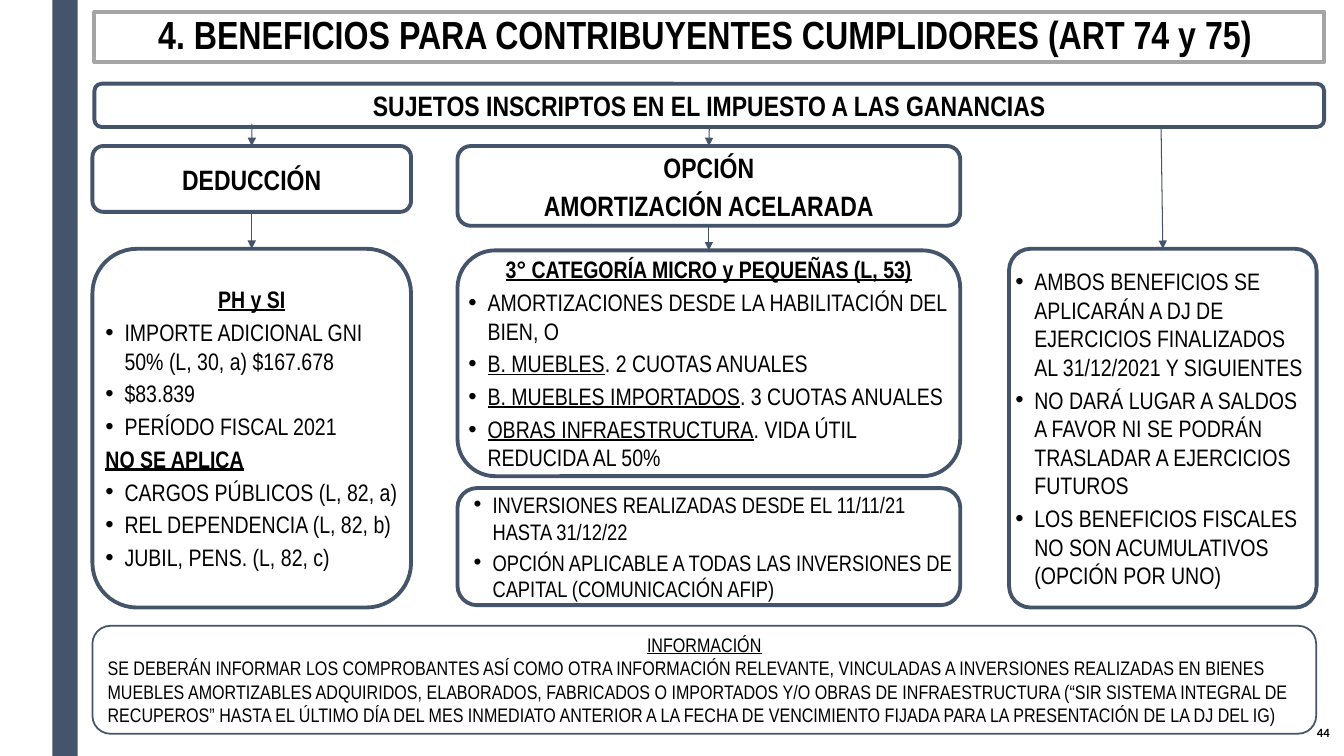
from dataclasses import dataclass
from typing import Optional

import pptx
import pptx.dml.color
import pptx.enum.shapes
import pptx.enum.text
import pptx.oxml
import pptx.oxml.ns
import pptx.util
from pptx.util import Cm

COLORS = {"slate": "44546A", "gray": "A5A5A5", "white": "FFFFFF", "black": "000000"}
ALIGN = pptx.enum.text.PP_ALIGN
SHAPES = pptx.enum.shapes.MSO_SHAPE
ROUNDED = SHAPES.ROUNDED_RECTANGLE
TOP, BOTTOM = 0, 2
HANGING = 0.48


@dataclass
class Span:
    text: str
    bold: bool = False
    underline: bool = False


@dataclass
class Para:
    spans: list[Span]
    align: ALIGN = ALIGN.LEFT
    indent: float = 0  # left edge of bulleted text; 0 means no bullet
    line_spacing: Optional[float] = None


@dataclass
class Box:
    key: str
    left: float
    top: float
    width: float
    height: float
    paras: list[Para]
    size: float = 17
    space_after: float = 3
    inset: tuple[float, float, float] = (0, 0, 0)  # left, right, top and bottom
    line: Optional[str] = "slate"
    line_width: float = 2.75
    fill: str = "white"
    kind: SHAPES = ROUNDED
    corner: Optional[float] = None


@dataclass
class Arrow:
    start: Optional[str]  # box whose bottom middle it leaves
    end: str  # box whose top middle it reaches
    free_start: tuple[float, float] = (0, 0)


def heading(text: str, underline: bool = False, align: ALIGN = ALIGN.CENTER,
            line_spacing: Optional[float] = None) -> Para:
    return Para([Span(text, True, underline)], align, line_spacing=line_spacing)


def bullet(text: str, lead: str = "", indent: float = HANGING) -> Para:
    spans = [Span(lead, underline=True)] if lead else []
    return Para(spans + [Span(text)], indent=indent)


def color(name: str) -> pptx.dml.color.RGBColor:
    return pptx.dml.color.RGBColor.from_string(COLORS[name])


def apply(target, formats: dict) -> None:
    for key, value in formats.items():
        setattr(target, key, value)


def write_paras(frame, paras: list[Para], size: float, space_after: float,
                inset: tuple[float, float, float], font: str = "Arial Narrow") -> None:
    left, right, edge = (Cm(length) for length in inset)
    apply(frame, {"word_wrap": True, "margin_left": left, "margin_right": right,
                  "margin_top": edge, "margin_bottom": edge,
                  "vertical_anchor": pptx.enum.text.MSO_ANCHOR.MIDDLE})
    for index, item in enumerate(paras):
        para = frame.add_paragraph() if index else frame.paragraphs[0]
        apply(para, {"alignment": item.align, "line_spacing": item.line_spacing,
                     "space_after": pptx.util.Pt(space_after)})
        if item.indent:
            props = para._p.get_or_add_pPr()
            props.set("marL", str(Cm(item.indent)))
            props.set("indent", str(-Cm(HANGING)))
            for tag, attribute, value in (("a:buFont", "typeface", "Arial"),
                                          ("a:buChar", "char", "•")):
                mark = pptx.oxml.ns.qn(tag)
                props.append(props.makeelement(mark, {attribute: value}))
        for piece in item.spans:
            span = para.add_run()
            span.text = piece.text
            apply(span.font, {"name": font, "size": pptx.util.Pt(size),
                              "bold": piece.bold, "underline": piece.underline})
            span.font.color.rgb = color("black")


def draw_box(page, box: Box):
    shape = page.shapes.add_shape(box.kind, Cm(box.left), Cm(box.top),
                                  Cm(box.width), Cm(box.height))
    shape.shadow.inherit = False
    shape.fill.solid()
    shape.fill.fore_color.rgb = color(box.fill)
    if box.line:
        shape.line.color.rgb = color(box.line)
        shape.line.width = pptx.util.Pt(box.line_width)
    else:
        shape.line.fill.background()
    if box.corner is not None:
        shape.adjustments[0] = box.corner
    if box.paras:
        write_paras(shape.text_frame, box.paras, box.size, box.space_after, box.inset)
    return shape


def draw_arrow(page, arrow: Arrow, shapes: dict) -> None:
    x, y = arrow.free_start
    line = page.shapes.add_connector(pptx.enum.shapes.MSO_CONNECTOR.STRAIGHT,
                                     Cm(x), Cm(y), Cm(x), Cm(y))
    if arrow.start:
        line.begin_connect(shapes[arrow.start], BOTTOM)
    line.end_connect(shapes[arrow.end], TOP)
    line.line.color.rgb = color("slate")
    line.line.width = pptx.util.Pt(0.75)
    outline = line.line._get_or_add_ln()
    outline.append(outline.makeelement(pptx.oxml.ns.qn("a:tailEnd"), {"type": "triangle"}))
    props = line._element.spPr
    props.append(props.makeelement(pptx.oxml.ns.qn("a:effectLst"), {}))


# Column and row positions in centimetres
LEFT, LEFT_W = 2.33, 8.03
MIDDLE, MIDDLE_W = 11.53, 12.67
RIGHT, RIGHT_W = 25.43, 7.75
HEAD_X, HEAD_W = 2.38, 30.99
OPTION_Y, DETAIL_Y, DETAIL_H = 3.68, 6.27, 9.04
PADDED = (0.25, 0.25, 0.13)

BOXES = [
    Box("Barra", 1.32, 0, 0.64, 19.05, [], line=None, fill="slate", kind=SHAPES.RECTANGLE),
    Box("Título", HEAD_X, 0.3, HEAD_W, 1.27,
        [heading("4. BENEFICIOS PARA CONTRIBUYENTES CUMPLIDORES (ART 74 y 75)",
                 line_spacing=0.89)],
        28, 0, (0.25, 0.48, 0.13), "gray", kind=SHAPES.RECTANGLE),
    Box("Sujetos", HEAD_X, 2.11, HEAD_W, 1.09,
        [heading("SUJETOS INSCRIPTOS EN EL IMPUESTO A LAS GANANCIAS")], 20, 0, PADDED),
    Box("Deducción", LEFT, OPTION_Y, LEFT_W, 1.66, [heading("DEDUCCIÓN")], 20),
    Box("Opción", MIDDLE, OPTION_Y, MIDDLE_W, 2.01,
        [heading("OPCIÓN"), heading("AMORTIZACIÓN ACELARADA")], 20),
    Box("Personas", LEFT, DETAIL_Y, LEFT_W, DETAIL_H, [
        heading("PH y SI", True),
        bullet("IMPORTE ADICIONAL GNI 50% (L, 30, a) $167.678"),
        bullet("$83.839"),
        bullet("PERÍODO FISCAL 2021"),
        heading("NO SE APLICA", True, ALIGN.LEFT),
        bullet("CARGOS PÚBLICOS (L, 82, a)"),
        bullet("REL DEPENDENCIA (L, 82, b)"),
        bullet("JUBIL, PENS. (L, 82, c)"),
    ], corner=0.14),
    Box("Categoría", MIDDLE, 6.31, MIDDLE_W, 5.69, [
        heading("3° CATEGORÍA MICRO y PEQUEÑAS (L, 53)", True),
        bullet("AMORTIZACIONES DESDE LA HABILITACIÓN DEL BIEN, O"),
        bullet(". 2 CUOTAS ANUALES", "B. MUEBLES"),
        bullet(". 3 CUOTAS ANUALES", "B. MUEBLES IMPORTADOS"),
        bullet(". VIDA ÚTIL REDUCIDA AL 50%", "OBRAS INFRAESTRUCTURA"),
    ]),
    Box("Condiciones", RIGHT, DETAIL_Y, RIGHT_W, DETAIL_H, [
        bullet("AMBOS BENEFICIOS SE APLICARÁN A DJ DE EJERCICIOS FINALIZADOS "
               "AL 31/12/2021 Y SIGUIENTES"),
        bullet("NO DARÁ LUGAR A SALDOS A FAVOR NI SE PODRÁN TRASLADAR A EJERCICIOS FUTUROS"),
        bullet("LOS BENEFICIOS FISCALES NO SON ACUMULATIVOS (OPCIÓN POR UNO)"),
    ], corner=0.07),
    Box("Inversiones", MIDDLE, 12.3, MIDDLE_W, 2.95, [
        bullet("INVERSIONES REALIZADAS DESDE EL 11/11/21 HASTA 31/12/22", indent=0.74),
        bullet("OPCIÓN APLICABLE A TODAS LAS INVERSIONES DE CAPITAL (COMUNICACIÓN AFIP)",
               indent=0.74),
    ], 16),
    Box("Información", LEFT, 15.77, 30.84, 2.72, [
        Para([Span("INFORMACIÓN", underline=True)], ALIGN.CENTER),
        Para([Span("SE DEBERÁN INFORMAR LOS COMPROBANTES ASÍ COMO OTRA INFORMACIÓN RELEVANTE, "
                   "VINCULADAS A INVERSIONES REALIZADAS EN BIENES MUEBLES AMORTIZABLES "
                   "ADQUIRIDOS, ELABORADOS, FABRICADOS O IMPORTADOS Y/O OBRAS DE "
                   "INFRAESTRUCTURA (“SIR SISTEMA INTEGRAL DE RECUPEROS” HASTA EL ÚLTIMO DÍA "
                   "DEL MES INMEDIATO ANTERIOR A LA FECHA DE VENCIMIENTO FIJADA PARA LA "
                   "PRESENTACIÓN DE LA DJ DEL IG)")]),
    ], 14, 0, PADDED, line_width=1.25),
]

ARROWS = [
    Arrow("Sujetos", "Opción"),
    Arrow(None, "Deducción", (6.35, 3.12)),
    Arrow("Opción", "Categoría"),
    Arrow(None, "Condiciones", (29.26, 3.2)),
    Arrow("Deducción", "Personas"),
]


def main() -> None:
    deck = pptx.Presentation()
    apply(deck, {"slide_width": Cm(33.87), "slide_height": Cm(19.05)})
    page = deck.slides.add_slide(deck.slide_layouts[6])

    # Boxes and the arrows between them
    shapes = {box.key: draw_box(page, box) for box in BOXES}
    for arrow in ARROWS:
        draw_arrow(page, arrow, shapes)

    # Page number
    number = page.shapes.add_textbox(Cm(32.92), Cm(17.91), Cm(0.84), Cm(1.12))
    write_paras(number.text_frame, [heading("44", align=ALIGN.RIGHT)], 9, 0,
                (0.2, 0.25, 0.13), "Calibri")

    deck.save("out.pptx")


if __name__ == "__main__":
    main()
